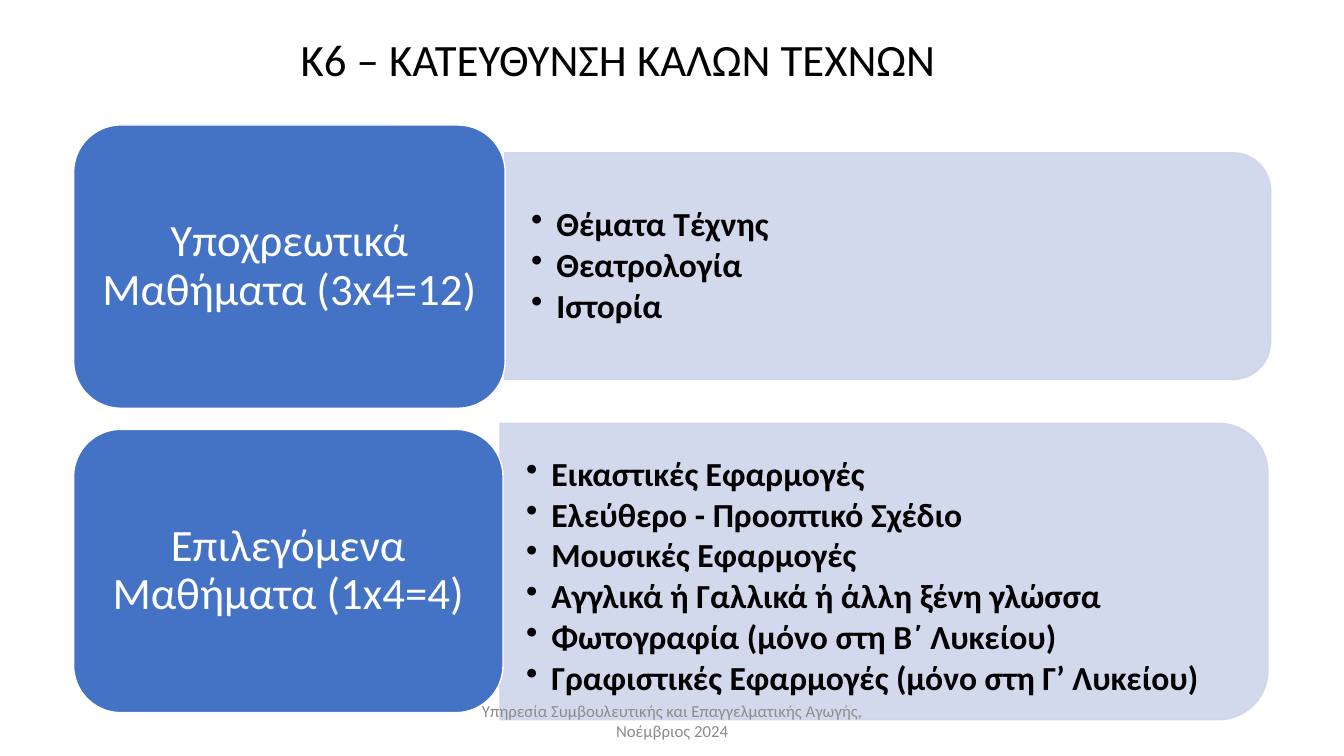
"""Builds a slide listing the subjects of the fine arts direction."""
from lxml import etree
from pptx import Presentation
from pptx import util as u
from pptx.dml.color import RGBColor
from pptx.enum import shapes, text
from pptx.oxml.ns import qn

Pt = u.Pt
PALE, BLUE, WHITE, BLACK, GREY = "CFD5EA", "4472C4", "FFFFFF", "000000", "8C8C8C"
GROUPS = [
    {"label": "Υποχρεωτικά Μαθήματα (3x4=12)",
     "label_box": (52.6, 89.3, 308.2, 202.3),
     "panel": (360.4, 109.1, 547.2, 162),
     "list_box": (360, 117.4, 539.3, 146.2),
     "items": ["Θέματα Τέχνης", "Θεατρολογία", "Ιστορία"]},
    {"label": "Επιλεγόμενα Μαθήματα (1x4=4)",
     "label_box": (52.6, 306.7, 306.7, 202.3),
     "panel": (357.1, 302.4, 548.6, 211.7),
     "list_box": (356.4, 317, 538.6, 190.8),
     "items": ["Εικαστικές Εφαρμογές", "Ελεύθερο - Προοπτικό Σχέδιο",
               "Μουσικές Εφαρμογές", "Αγγλικά ή Γαλλικά ή άλλη ξένη γλώσσα",
               "Φωτογραφία (μόνο στη Β΄ Λυκείου)",
               "Γραφιστικές Εφαρμογές (μόνο στη Γ’ Λυκείου)"]},
]


def rgb(value):
    """Return the colour for a hex string."""
    return RGBColor.from_string(value)


def assign(obj, values):
    """Set every attribute named in a dict."""
    for name, value in values.items():
        setattr(obj, name, value)


def add_bullet(p):
    """Give a paragraph a hanging round bullet."""
    pPr = p._p.get_or_add_pPr()
    pPr.set("marL", str(Pt(18)))
    pPr.set("indent", str(-Pt(18)))
    etree.SubElement(pPr, qn("a:buChar")).set("char", "•")


def write(sp, lines, size, color, bold=False, bullets=False, spacing=0.9,
          after=0, margins=(7.2, 3.6)):
    """Fill a shape with formatted paragraphs."""
    tf = sp.text_frame
    side, edge = (Pt(m) for m in margins)
    assign(tf, {"word_wrap": True, "vertical_anchor": text.MSO_ANCHOR.MIDDLE,
                "margin_left": side, "margin_right": side,
                "margin_top": edge, "margin_bottom": edge})
    align = text.PP_ALIGN.LEFT if bullets else text.PP_ALIGN.CENTER
    for i, line in enumerate(lines):
        p = tf.add_paragraph() if i else tf.paragraphs[0]
        assign(p, {"alignment": align, "line_spacing": spacing, "space_after": Pt(after)})
        if bullets:
            add_bullet(p)
        r = p.add_run()
        r.text = line
        assign(r.font, {"name": "Calibri", "size": Pt(size), "bold": bold})
        r.font.color.rgb = rgb(color)


def add_text(s, box, lines, size, color, **style):
    """Add a text box."""
    write(s.shapes.add_textbox(*map(Pt, box)), lines, size, color, **style)


def add_block(s, kind, box, fill, line, alpha=None):
    """Add a filled and outlined preset shape."""
    sp = s.shapes.add_shape(kind, *map(Pt, box))
    sp.shadow.inherit = False
    sp.fill.solid()
    sp.fill.fore_color.rgb = rgb(fill)
    sp.line.color.rgb = rgb(line)
    sp.line.width = Pt(1)
    if alpha:
        for clr in sp._element.spPr.iter(qn("a:srgbClr")):
            etree.SubElement(clr, qn("a:alpha")).set("val", str(alpha * 1000))
    return sp


def add_panel(s, box):
    """Add a pale panel rounded on its right side."""
    x, y, w, h = box
    turned = (x + (w - h) / 2, y + (h - w) / 2, h, w)
    sp = add_block(s, shapes.MSO_SHAPE.ROUND_2_SAME_RECTANGLE, turned, PALE, PALE, alpha=90)
    sp.rotation = 90


def add_group(s, group):
    """Add a label block with its list of subjects."""
    add_panel(s, group["panel"])
    add_text(s, group["list_box"], group["items"], 24, BLACK, bold=True,
             bullets=True, after=3.2, margins=(19.4, 10))
    sp = add_block(s, shapes.MSO_SHAPE.ROUNDED_RECTANGLE, group["label_box"], BLUE, WHITE)
    write(sp, [group["label"]], 32, WHITE, margins=(9.4, 5))


def main():
    """Build and save the slide."""
    prs = Presentation()
    assign(prs, {"slide_width": Pt(960), "slide_height": Pt(540)})
    s = prs.slides.add_slide(prs.slide_layouts[6])
    add_text(s, (51.8, 12.2, 779.8, 64.8), ["Κ6 – ΚΑΤΕΥΘΥΝΣΗ ΚΑΛΩΝ ΤΕΧΝΩΝ"], 32, BLACK)
    for group in GROUPS:
        add_group(s, group)
    footer = "Υπηρεσία Συμβουλευτικής και Επαγγελματικής Αγωγής, Νοέμβριος 2024"
    add_text(s, (318.2, 500.4, 324, 28.8), [footer], 12, GREY, spacing=1.0)
    prs.save("out.pptx")


if __name__ == "__main__":
    main()
